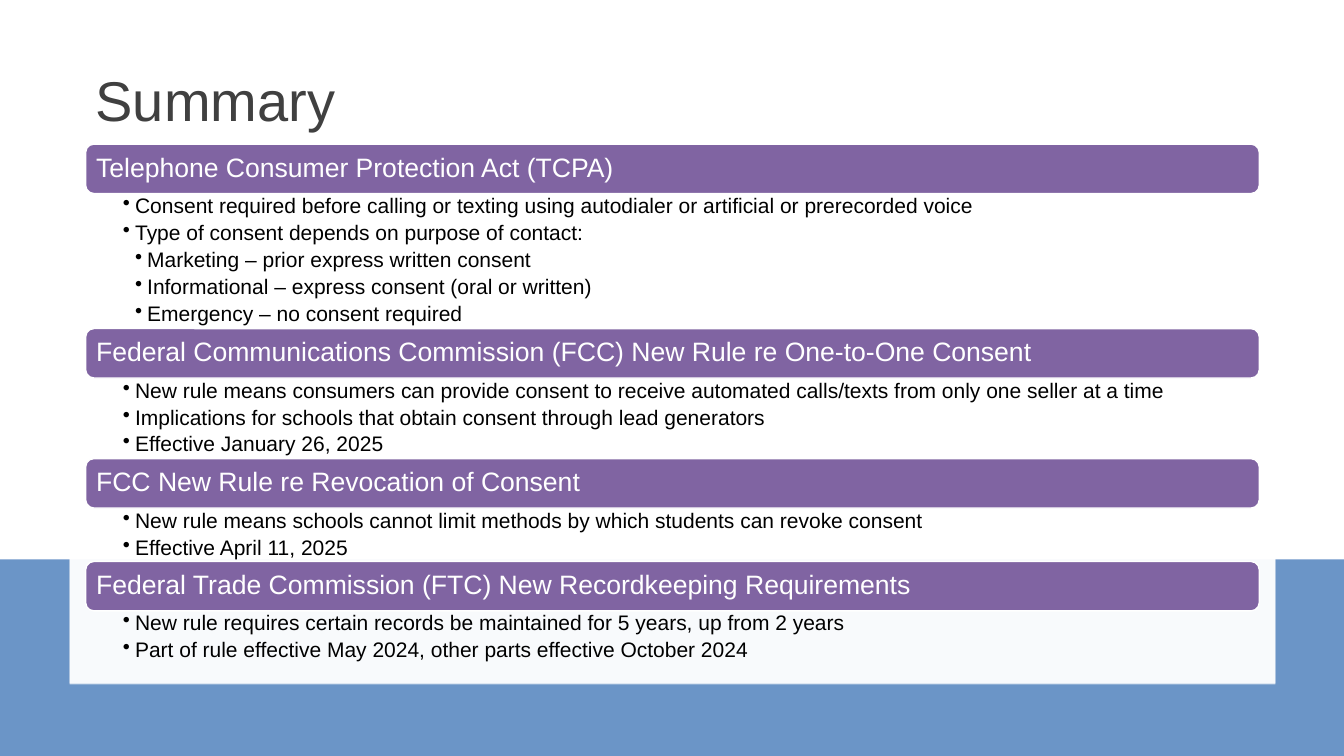
import pptx
import pptx.util
import pptx.dml.color
import pptx.enum.shapes
import pptx.enum.text
import pptx.oxml
import pptx.oxml.ns

Inches = pptx.util.Inches
Pt = pptx.util.Pt
RGBColor = pptx.dml.color.RGBColor
Shape = pptx.enum.shapes.MSO_SHAPE
Anchor = pptx.enum.text.MSO_ANCHOR
Align = pptx.enum.text.PP_ALIGN
qn = pptx.oxml.ns.qn

BLUE = RGBColor(0x4F, 0x81, 0xBD)
PURPLE = RGBColor(0x80, 0x64, 0xA2)
WHITE = RGBColor(0xFF, 0xFF, 0xFF)
BLACK = RGBColor(0x00, 0x00, 0x00)
GRAY = RGBColor(0x40, 0x40, 0x40)

LEFT, WIDTH = 0.85, 11.64
FIRST_TOP = 1.43
HEADER_HEIGHT = 0.49
LINE_HEIGHT = 0.27
SECTION_BASE = 0.48
INDENT = 0.12

SECTIONS = [
    ("Telephone Consumer Protection Act (TCPA)", [
        (1, "Consent required before calling or texting using autodialer or artificial or prerecorded voice"),
        (1, "Type of consent depends on purpose of contact:"),
        (2, "Marketing – prior express written consent"),
        (2, "Informational – express consent (oral or written)"),
        (2, "Emergency – no consent required"),
    ]),
    ("Federal Communications Commission (FCC) New Rule re One-to-One Consent", [
        (1, "New rule means consumers can provide consent to receive automated calls/texts from only one seller at a time"),
        (1, "Implications for schools that obtain consent through lead generators"),
        (1, "Effective January 26, 2025"),
    ]),
    ("FCC New Rule re Revocation of Consent", [
        (1, "New rule means schools cannot limit methods by which students can revoke consent"),
        (1, "Effective April 11, 2025"),
    ]),
    ("Federal Trade Commission (FTC) New Recordkeeping Requirements", [
        (1, "New rule requires certain records be maintained for 5 years, up from 2 years"),
        (1, "Part of rule effective May 2024, other parts effective October 2024"),
    ]),
]


def add_panel(page, left, top, width, height, color, kind=Shape.RECTANGLE, opacity=100, outline=None):
    panel = page.shapes.add_shape(kind, Inches(left), Inches(top), Inches(width), Inches(height))
    panel.shadow.inherit = False
    panel.fill.solid()
    panel.fill.fore_color.rgb = color
    if opacity < 100:
        color_element = panel.fill._xPr.find(qn("a:solidFill"))[0]
        alpha = pptx.oxml.parse_xml(f'<a:alpha {pptx.oxml.ns.nsdecls("a")} val="{opacity * 1000}"/>')
        color_element.append(alpha)
    if outline is None:
        panel.line.fill.background()
    else:
        panel.line.color.rgb = outline
        panel.line.width = Pt(1)
    return panel


def set_frame(frame, anchor, left, top, right, bottom):
    frame.word_wrap = True
    frame.vertical_anchor = anchor
    frame.margin_left, frame.margin_top = Inches(left), Inches(top)
    frame.margin_right, frame.margin_bottom = Inches(right), Inches(bottom)


def write_text(para, text, size, color, level=0, after=0):
    para.alignment = Align.LEFT
    para.line_spacing = 0.9
    para.space_after = Pt(after)
    if level:
        para.level = level
        properties = para._p.get_or_add_pPr()
        properties.set("marL", str(Inches(INDENT * level)))
        properties.set("indent", str(-Inches(INDENT)))
        bullet = pptx.oxml.parse_xml(f'<a:buChar {pptx.oxml.ns.nsdecls("a")} char="•"/>')
        properties.append(bullet)
    span = para.add_run()
    span.text = text
    for font in (para.font, span.font):
        font.name = "Arial"
        font.size = Pt(size)
        font.color.rgb = color


def add_box(page, left, top, width, height):
    return page.shapes.add_textbox(Inches(left), Inches(top), Inches(width), Inches(height)).text_frame


def add_header(page, top, text):
    bar = add_panel(page, LEFT, top, WIDTH, HEADER_HEIGHT, PURPLE,
                    kind=Shape.ROUNDED_RECTANGLE, outline=WHITE)
    set_frame(bar.text_frame, Anchor.MIDDLE, 0.08, 0.08, 0.08, 0.08)
    write_text(bar.text_frame.paragraphs[0], text, size=19, color=WHITE)


def add_bullets(page, top, bullets):
    frame = add_box(page, LEFT, top, WIDTH, LINE_HEIGHT * len(bullets))
    set_frame(frame, Anchor.TOP, 0.37, 0.02, 0.15, 0.02)
    for index, (level, text) in enumerate(bullets):
        para = frame.add_paragraph() if index else frame.paragraphs[0]
        write_text(para, text, size=15, color=BLACK, level=level, after=3)


def add_title(page, text):
    frame = add_box(page, LEFT, 0.46, WIDTH, 1.14)
    set_frame(frame, Anchor.MIDDLE, 0.1, 0.05, 0.1, 0.05)
    write_text(frame.paragraphs[0], text, size=40, color=GRAY)


def main():
    deck = pptx.Presentation()
    deck.slide_width, deck.slide_height = Inches(13.33), Inches(7.5)
    page = deck.slides.add_slide(deck.slide_layouts[6])
    add_panel(page, 0, 5.55, 13.33, 1.95, BLUE, opacity=84)
    add_panel(page, 0.69, 0.36, 11.96, 6.42, WHITE, opacity=86)
    add_panel(page, 0.69, 1.49, 11.96, 5.3, WHITE, opacity=69)
    add_title(page, "Summary")
    top = FIRST_TOP
    for header, bullets in SECTIONS:
        add_header(page, top, header)
        add_bullets(page, top + HEADER_HEIGHT, bullets)
        top += SECTION_BASE + LINE_HEIGHT * len(bullets)
    deck.save("out.pptx")


if __name__ == "__main__":
    main()
